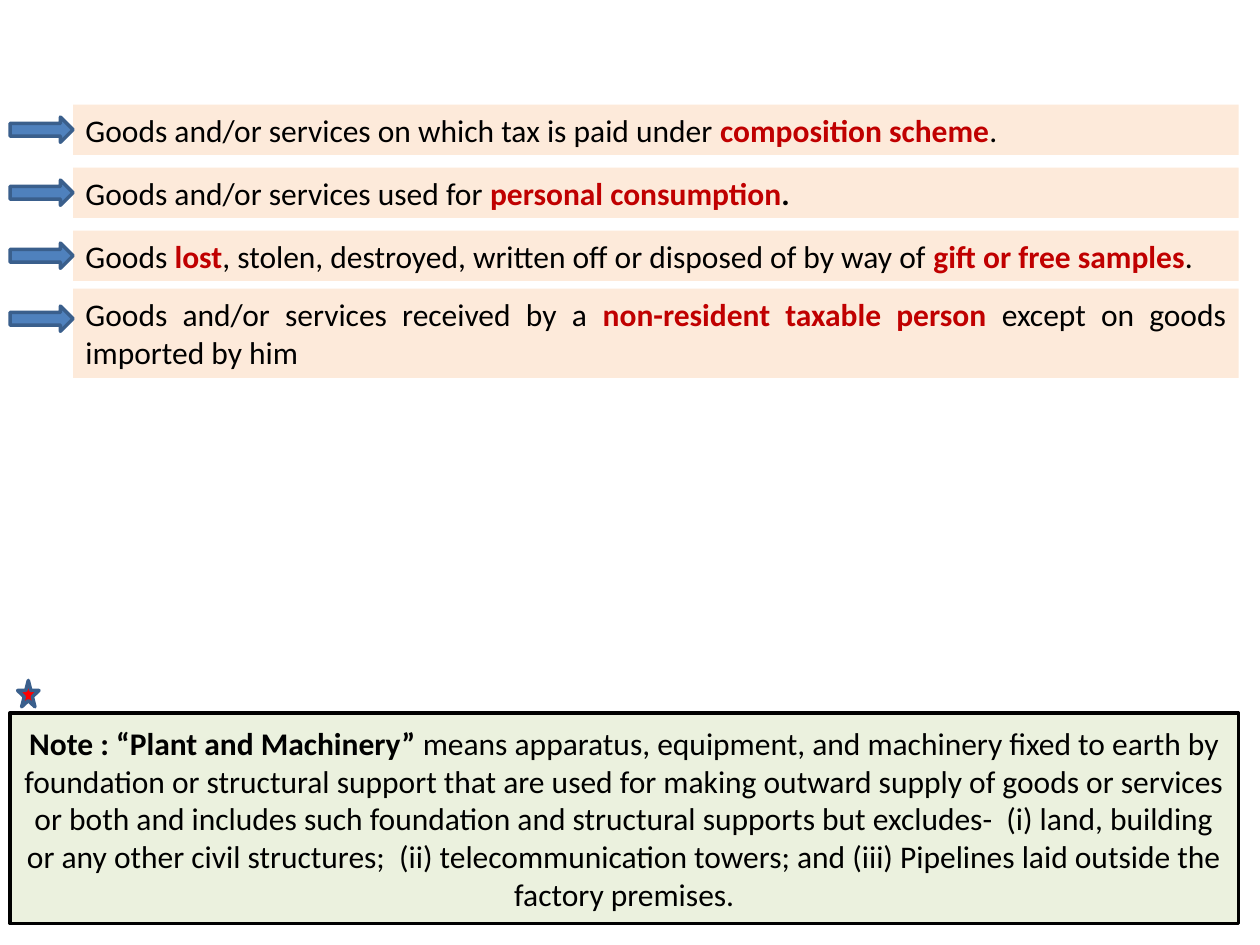
from pptx import Presentation
from pptx.dml.color import RGBColor
from pptx.enum.shapes import MSO_SHAPE as Preset
from pptx.enum.text import MSO_ANCHOR as Anchor, PP_ALIGN as Align
from pptx.util import Inches, Pt

BLACK = RGBColor(0x00, 0x00, 0x00)
CRIMSON = RGBColor(0xC0, 0x00, 0x00)
RED = RGBColor(0xFF, 0x00, 0x00)
PEACH = RGBColor(0xFD, 0xEA, 0xDA)
PALE_GREEN = RGBColor(0xEB, 0xF1, 0xDE)
BLUE = RGBColor(0x4F, 0x81, 0xBD)
DARK_BLUE = RGBColor(0x3A, 0x5F, 0x8C)

LEFT, WIDTH = 0.08, 9.75
FIRST_ROW, ROW_PITCH = 0.83, 0.5
ROW_HEIGHT, TALL_ROW_HEIGHT, TALL_ROW_RISE = 0.4, 0.71, 0.04
ARROW_WIDTH, ARROW_HEIGHT, ARROW_DROP = 0.5, 0.2, 0.1

BLOCKED_CREDITS = [
    [("Goods and/or services on which tax is paid under ", BLACK, False),
     ("composition scheme", CRIMSON, True), (".", BLACK, False)],
    [("Goods and/or services used for ", BLACK, False),
     ("personal consumption", CRIMSON, True), (".", BLACK, True)],
    [("Goods ", BLACK, False), ("lost", CRIMSON, True),
     (", stolen, destroyed, written off or disposed of by way of ", BLACK, False),
     ("gift or free samples", CRIMSON, True), (".", BLACK, False)],
    [("Goods and/or services received by a ", BLACK, False),
     ("non-resident taxable person", CRIMSON, True),
     (" except on goods imported by him", BLACK, False)],
]
NOTE = [
    ("Note : “Plant and Machinery”", BLACK, True),
    (" means apparatus, equipment, and machinery fixed to earth by foundation or "
     "structural support that are used for making outward supply of goods or services "
     "or both and includes such foundation and structural supports but excludes-  "
     "(i) land, building or any other civil structures;  (ii) telecommunication towers; "
     "and (iii) Pipelines laid outside the factory premises.", BLACK, False),
]


def add_figure(page, preset, box, fill, outline=None):
    shape = page.shapes.add_shape(preset, *(Inches(length) for length in box))
    shape.shadow.inherit = False
    shape.fill.solid()
    shape.fill.fore_color.rgb = fill
    if outline is None:
        shape.line.fill.background()
    else:
        shape.line.color.rgb = outline
        shape.line.width = Pt(2)
    return shape


def write_text(shape, spans, align, anchor):
    frame = shape.text_frame
    frame.word_wrap = True
    frame.vertical_anchor = anchor
    para = frame.paragraphs[0]
    para.alignment = align
    para.font.name = "Calibri"
    para.font.size = Pt(18)
    for text, color, bold in spans:
        span = para.add_run()
        span.text = text
        span.font.name = "Calibri"
        span.font.size = Pt(18)
        span.font.color.rgb = color
        span.font.bold = bold


def add_credit_row(page, box, spans, align, arrow_top):
    left, top, width, height = box
    banner_box = (left + ARROW_WIDTH, top, width - ARROW_WIDTH, height)
    banner = add_figure(page, Preset.RECTANGLE, banner_box, PEACH)
    write_text(banner, spans, align, Anchor.TOP)
    arrow_box = (left, arrow_top, ARROW_WIDTH, ARROW_HEIGHT)
    add_figure(page, Preset.RIGHT_ARROW, arrow_box, BLUE, DARK_BLUE)


def add_credit_list(page, left, top, width):
    last = len(BLOCKED_CREDITS) - 1
    for index, spans in enumerate(BLOCKED_CREDITS):
        row_top = top + index * ROW_PITCH
        arrow_top = row_top + ARROW_DROP
        if index == last:
            box = (left, row_top - TALL_ROW_RISE, width, TALL_ROW_HEIGHT)
            add_credit_row(page, box, spans, Align.JUSTIFY, arrow_top)
        else:
            box = (left, row_top, width, ROW_HEIGHT)
            add_credit_row(page, box, spans, Align.LEFT, arrow_top)


def add_note(page, left, top, width, height):
    star_box = (left + 0.06, top - 0.26, 0.17, 0.21)
    add_figure(page, Preset.STAR_5_POINT, star_box, RED, DARK_BLUE)
    panel = add_figure(page, Preset.RECTANGLE, (left, top, width, height), PALE_GREEN, BLACK)
    write_text(panel, NOTE, Align.CENTER, Anchor.MIDDLE)


def main():
    deck = Presentation()
    deck.slide_width, deck.slide_height = Inches(10), Inches(7.5)
    page = deck.slides.add_slide(deck.slide_layouts[6])
    add_credit_list(page, LEFT, FIRST_ROW, WIDTH)
    add_note(page, LEFT, 5.66, WIDTH, 1.67)
    deck.save("out.pptx")


if __name__ == "__main__":
    main()
